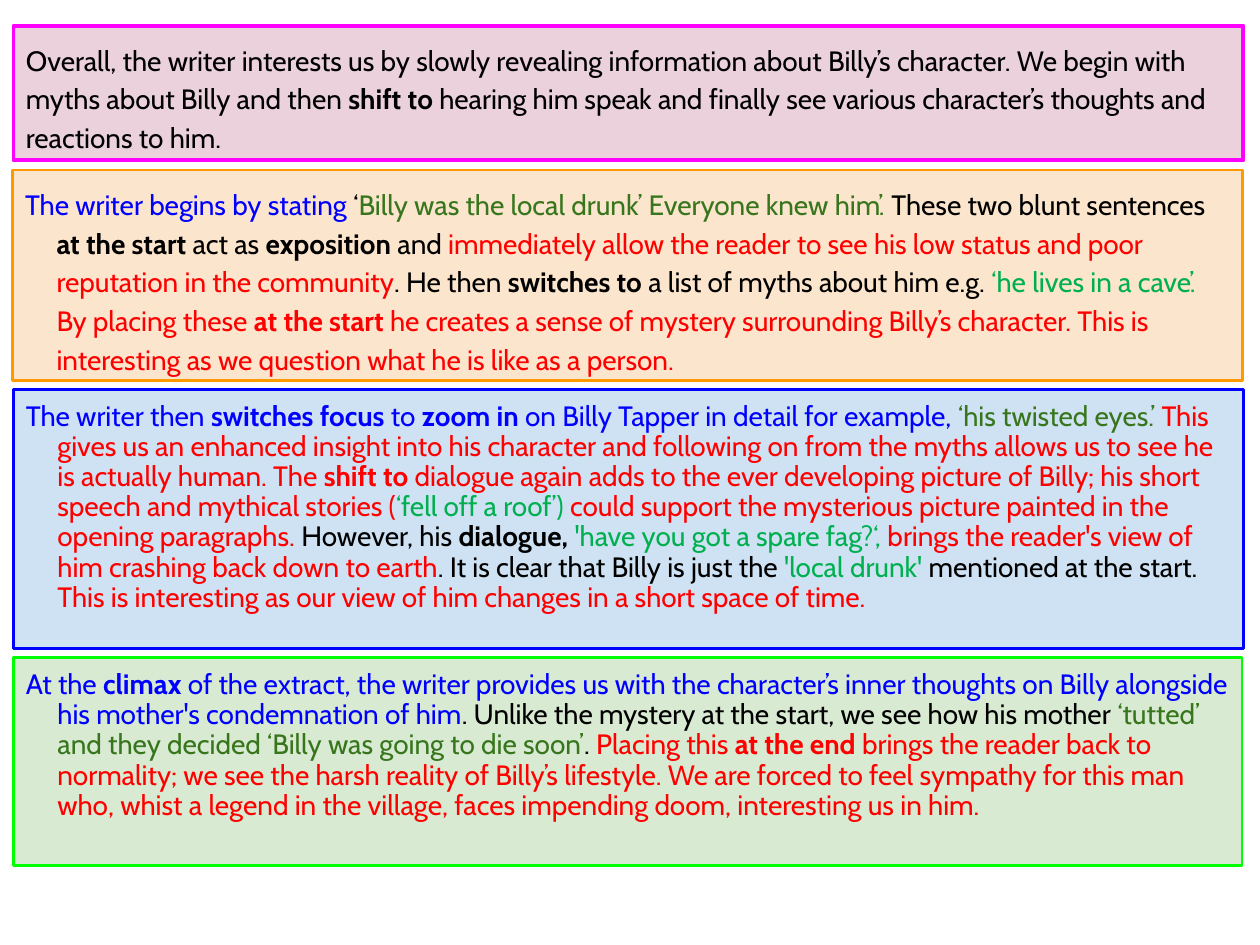
from pptx import Presentation
from pptx.dml.color import RGBColor
from pptx.enum.shapes import MSO_SHAPE
from pptx.enum.text import MSO_ANCHOR, PP_ALIGN
from pptx.util import Pt

RECT = MSO_SHAPE.RECTANGLE
TOP = MSO_ANCHOR.TOP
LEFT = PP_ALIGN.LEFT

HEX = {
    "black": "000000", "blue": "0000FF", "red": "FF0000",
    "olive": "38761D", "green": "00B050",
    "pink": "EAD1DC", "magenta": "FF00FF",
    "peach": "FCE5CD", "orange": "FF9900",
    "sky": "CFE2F3", "mint": "D9EAD3", "lime": "00FF00",
}

# Each part is (colour, text); words between asterisks are bold.
INTRO = [
    ("black", "Overall, the writer interests us by slowly revealing information about "
              "Billy’s character. We begin with myths about Billy and then *shift to *"
              "hearing him speak and finally see various character’s thoughts and "
              "reactions to him."),
]
START = [
    ("blue", "The writer begins by stating"),
    ("black", " ‘"),
    ("olive", "Billy was the local drunk’ Everyone knew him’. "),
    ("black", "These two blunt sentences *at the start *act as *exposition* and "),
    ("red", "immediately allow the reader to see his low status and poor reputation "
            "in the community"),
    ("black", ". He then *switches to *a list of myths about him e.g. "),
    ("green", "‘he lives in a cave’. "),
    ("red", "By placing these *at the start *he creates a sense of mystery surrounding "
            "Billy’s character. This is interesting as we question what he is like as "
            "a person."),
]
FOCUS = [
    ("blue", "The writer then *switches focus *to *zoom in *on Billy Tapper in detail "
             "for example,"),
    ("olive", " ‘his twisted eyes.’ "),
    ("red", "This gives us an enhanced insight into his character and following on from "
            "the myths allows us to see he is actually human. The *shift to *dialogue "
            "again adds to the ever developing picture of Billy; his short speech and "
            "mythical stories ("),
    ("green", "‘fell off a roof’) "),
    ("red", "could support the mysterious picture painted in the opening paragraphs. "),
    ("black", "However, his *dialogue, *"),
    ("green", "'have you got a spare fag?‘,"),
    ("red", " brings the reader's view of him crashing back down to earth"),
    ("black", ". It is clear that Billy is just the "),
    ("green", "'local drunk' "),
    ("black", "mentioned at the start."),
    ("red", " This is interesting as our view of him changes in a short space of time."),
]
CLIMAX = [
    ("blue", "At the *climax *of the extract, the writer provides us with the character’s "
             "inner thoughts on Billy alongside his mother's condemnation of him"),
    ("black", ". Unlike the mystery at the start, we see how his mother "),
    ("olive", "‘tutted’ and they decided ‘Billy was going to die soon’"),
    ("black", ". "),
    ("red", "Placing this *at the end *brings the reader back to normality; we see the "
            "harsh reality of Billy’s lifestyle. We are forced to feel sympathy for this "
            "man who, whist a legend in the village, faces impending doom, interesting "
            "us in him."),
]


class Page:
    font = "Cabin"
    size = Pt(16)
    inset = Pt(7.2)

    def __init__(self, deck):
        self.slide = deck.slides.add_slide(deck.slide_layouts[6])

    def color(self, name):
        return RGBColor.from_string(HEX[name])

    def panel(self, left, top, width, height, fill, edge, weight=1.5):
        box = self.slide.shapes.add_shape(
            RECT, Pt(left), Pt(top), Pt(width), Pt(height))
        box.shadow.inherit = False
        box.fill.solid()
        box.fill.fore_color.rgb = self.color(fill)
        box.line.color.rgb = self.color(edge)
        box.line.width = Pt(weight)
        return box

    def prose(self, box, parts, lines, hang=0):
        frame = box.text_frame
        frame.word_wrap = True
        frame.vertical_anchor = TOP
        frame.margin_left = frame.margin_right = self.inset
        frame.margin_top = frame.margin_bottom = self.inset
        para = frame.paragraphs[0]
        para.alignment = LEFT
        para.line_spacing = lines
        if hang:
            props = para._p.get_or_add_pPr()
            props.set("marL", str(Pt(hang)))
            props.set("indent", str(-Pt(hang)))
        for name, text in parts:
            for i, piece in enumerate(text.split("*")):
                if piece:
                    run = para.add_run()
                    run.text = piece
                    run.font.name = self.font
                    run.font.size = self.size
                    run.font.bold = i % 2 == 1
                    run.font.color.rgb = self.color(name)


def main():
    deck = Presentation()
    deck.slide_width, deck.slide_height = Pt(720), Pt(540)
    page = Page(deck)

    # Overview
    box = page.panel(7.7, 14.7, 702.8, 77, "pink", "magenta", 2.25)
    page.prose(box, INTRO, 1.15)

    # Opening, change of focus and ending
    box = page.panel(7.2, 97.2, 702.8, 120.2, "peach", "orange")
    page.prose(box, START, 1.15, 18)
    box = page.panel(7.7, 222.5, 702.8, 148.3, "sky", "blue")
    page.prose(box, FOCUS, 0.9, 18)
    box = page.panel(7.7, 375.8, 702, 118.8, "mint", "lime")
    page.prose(box, CLIMAX, 0.9, 18)

    deck.save("out.pptx")


if __name__ == "__main__":
    main()
